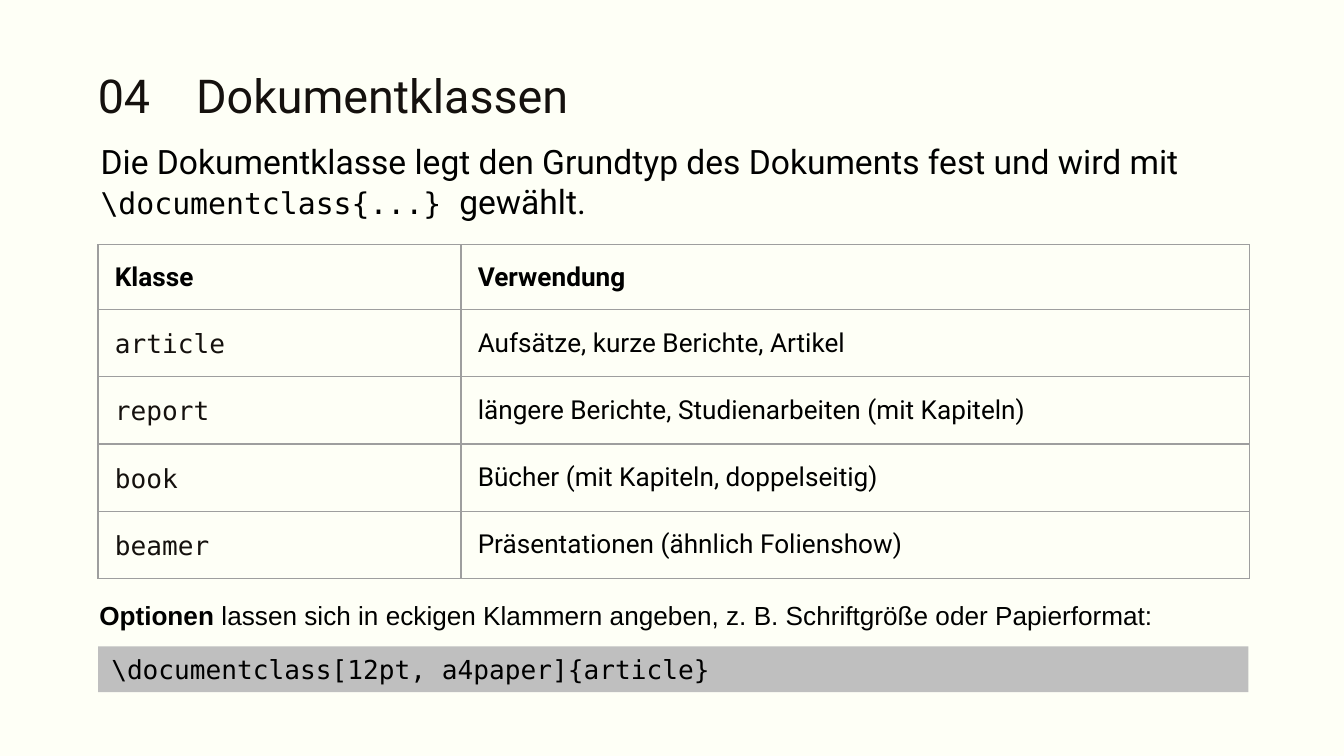
from typing import NamedTuple

from lxml.etree import SubElement as Sub
from pptx import Presentation
from pptx.dml.color import RGBColor as Rgb
from pptx.enum.shapes import MSO_SHAPE as Kind
from pptx.enum.text import MSO_ANCHOR as Anchor, MSO_AUTO_SIZE as Auto, PP_ALIGN as Align
from pptx.oxml.ns import qn
from pptx.util import Inches, Pt

SANS, MONO, ARIAL = "Roboto", "DejaVu Sans Mono", "Arial"
BLACK, INK, GREY, LINE, PAPER = "000000", "15110E", "BFBFBF", "9E9E9E", "FEFFF6"


class Run(NamedTuple):
    text: str
    size: float = 14
    font: str = SANS
    color: str = BLACK
    bold: bool = False


class Box(NamedTuple):
    left: float
    top: float
    width: float
    height: float

    def emu(self) -> list:
        return [Inches(side) for side in self]


class Label(NamedTuple):
    box: Box
    runs: list
    inset: float = 0.05
    grow: bool = True


class Row(NamedTuple):
    name: str
    use: str


def paint(fill, color: str) -> None:
    fill.solid()
    fill.fore_color.rgb = Rgb.from_string(color)


def write(frame, runs: list) -> None:
    par = frame.paragraphs[0]
    par.alignment = Align.LEFT
    for item in runs:
        run = par.add_run()
        run.text = item.text
        font = run.font
        font.name, font.size, font.bold = item.font, Pt(item.size), item.bold
        font.color.rgb = Rgb.from_string(item.color)


def pad(frame, side: float, end: float) -> None:
    frame.margin_left = frame.margin_right = Inches(side)
    frame.margin_top = frame.margin_bottom = Inches(end)


def add_label(slide, label: Label) -> None:
    frame = slide.shapes.add_textbox(*label.box.emu()).text_frame
    frame.word_wrap = True
    frame.auto_size = Auto.SHAPE_TO_FIT_TEXT if label.grow else Auto.NONE
    pad(frame, 0.1, label.inset)
    write(frame, label.runs)


def add_title(slide, box: Box, run: Run) -> None:
    title = slide.shapes.title
    title.left, title.top, title.width, title.height = box.emu()
    frame = title.text_frame
    frame.auto_size = Auto.NONE
    frame.vertical_anchor = Anchor.TOP
    pad(frame, 0.1, 0.1)
    write(frame, [run])


def add_code(slide, box: Box, run: Run) -> None:
    bar = slide.shapes.add_shape(Kind.RECTANGLE, *box.emu())
    bar.shadow.inherit = False
    paint(bar.fill, GREY)
    bar.line.fill.background()
    frame = bar.text_frame
    frame.word_wrap = True
    frame.auto_size = Auto.SHAPE_TO_FIT_TEXT
    frame.vertical_anchor = Anchor.TOP
    write(frame, [run])


def edge(cell) -> None:
    props = cell._tc.get_or_add_tcPr()
    for side in ("lnL", "lnR", "lnT", "lnB"):
        line = Sub(props, qn(f"a:{side}"), w=str(Pt(0.75)))
        Sub(Sub(line, qn("a:solidFill")), qn("a:srgbClr"), val=LINE)


def add_grid(slide, box: Box, widths: list, high: float, rows: list) -> None:
    shape = slide.shapes.add_table(len(rows), len(widths), *box.emu())
    table = shape.table
    table.first_row = table.horz_banding = False
    for col, width in zip(table.columns, widths):
        col.width = Inches(width)
    for line in table.rows:
        line.height = Inches(high)
    shape.height = Inches(box.height)
    for y, row in enumerate(rows):
        head = y == 0
        name = Run(row.name, bold=True) if head else Run(row.name, font=MONO, color=INK)
        for x, run in enumerate((name, Run(row.use, bold=head))):
            cell = table.cell(y, x)
            edge(cell)
            cell.fill.background()
            cell.vertical_anchor = Anchor.MIDDLE
            pad(cell, 1 / 8, 1 / 8)
            write(cell.text_frame, [run])
            if run.font == MONO:
                cell.text_frame.paragraphs[0].line_spacing = Pt(18)


ROWS = [
    Row("Klasse", "Verwendung"),
    Row("article", "Aufsätze, kurze Berichte, Artikel"),
    Row("report", "längere Berichte, Studienarbeiten (mit Kapiteln)"),
    Row("book", "Bücher (mit Kapiteln, doppelseitig)"),
    Row("beamer", "Präsentationen (ähnlich Folienshow)"),
]

LABELS = [
    Label(Box(0.63, 0.4, 0.73, 0.6), [Run("04", 25, color=INK)], 0.1, False),
    Label(Box(0.65, 1, 8.72, 0.71), [
        Run("Die Dokumentklasse legt den Grundtyp des Dokuments fest und wird mit ", 18),
        Run("\\documentclass{...} ", 16, MONO),
        Run("gewählt.", 18),
    ]),
    Label(Box(0.64, 4.41, 8.72, 0.34), [
        Run("Optionen", font=ARIAL, bold=True),
        Run(" lassen sich in eckigen Klammern angeben, z. B. Schriftgröße oder Papierformat:",
            font=ARIAL),
    ]),
]


def main() -> None:
    deck = Presentation()
    deck.slide_width, deck.slide_height = Inches(10), Inches(10 * 9 / 16)
    slide = deck.slides.add_slide(deck.slide_layouts[5])
    paint(slide.background.fill, PAPER)
    add_title(slide, Box(1.36, 0.4, 7.71, 0.6), Run("Dokumentklassen", 25, color=INK))
    for label in LABELS:
        add_label(slide, label)
    add_grid(slide, Box(0.73, 1.82, 8.56, 2.42), [2.7, 5.87], 0.41, ROWS)
    add_code(slide, Box(0.73, 4.81, 8.56, 0.34),
             Run("\\documentclass[12pt, a4paper]{article}", font=MONO))
    deck.save("out.pptx")


if __name__ == "__main__":
    main()
